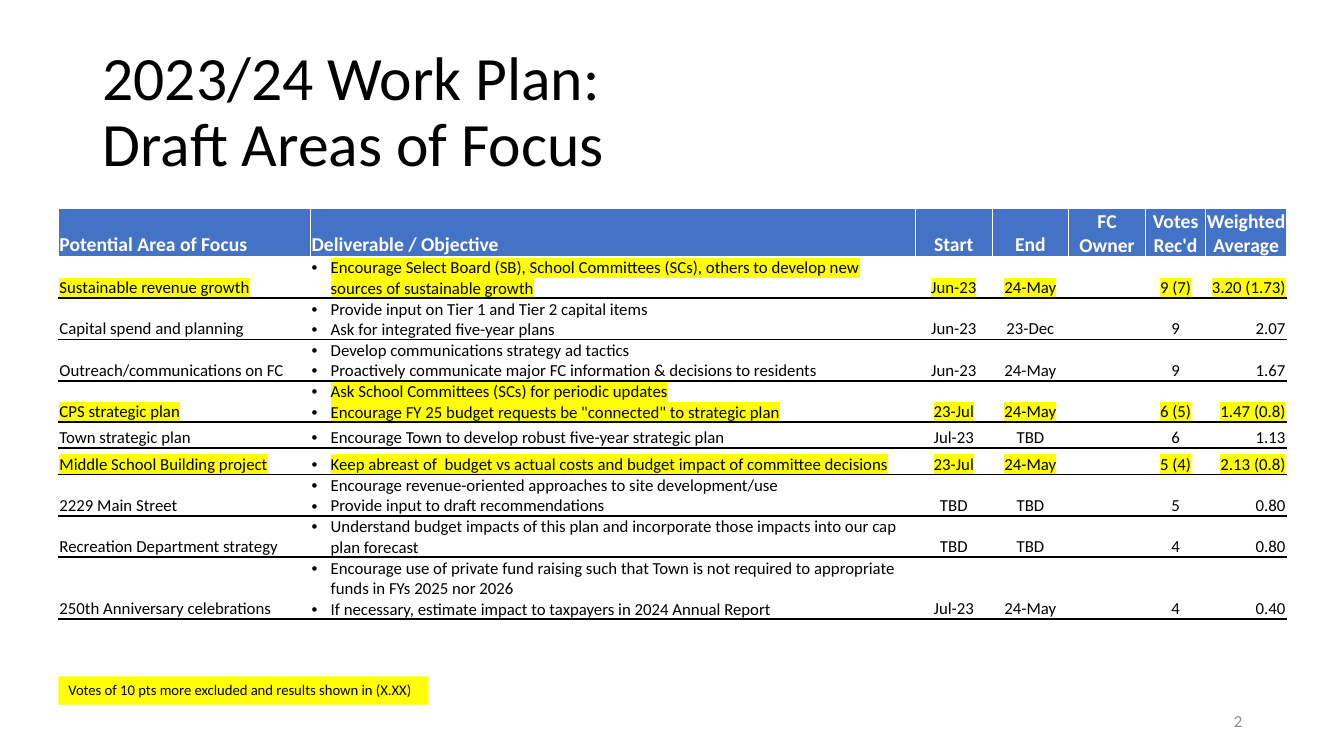
"""Build the 2023/24 work plan slide with its table of draft focus areas."""
from lxml import etree
from pptx import Presentation
from pptx.dml.color import RGBColor
from pptx.enum.shapes import MSO_SHAPE
from pptx.enum.text import MSO_ANCHOR, MSO_AUTO_SIZE, PP_ALIGN
from pptx.oxml.ns import qn
from pptx.util import Pt

PX = 9144
FONT = "Calibri"
LEFT, CENTER, RIGHT = PP_ALIGN.LEFT, PP_ALIGN.CENTER, PP_ALIGN.RIGHT
TOP, MIDDLE, BOTTOM = MSO_ANCHOR.TOP, MSO_ANCHOR.MIDDLE, MSO_ANCHOR.BOTTOM
COLORS = {
    "text": "000000",
    "rule": "000000",
    "paper": "FFFFFF",
    "header": "4472C4",
    "marker": "FFFF00",
    "number": "8C8C8C",
}
COLUMN_WIDTHS = [250, 600, 76, 76, 76, 60, 80]
ALIGNMENTS = [LEFT, LEFT, CENTER, CENTER, CENTER, CENTER, RIGHT]
ROW_HEIGHT = 26
BULLET_INDENT = 19
HEADINGS = ["Potential Area of Focus", "Deliverable / Objective", "Start", "End",
            "FC Owner", "Votes Rec'd", "Weighted Average"]
FOCUS_AREAS = [
    ["Sustainable revenue growth",
     "Encourage Select Board (SB), School Committees (SCs), others to develop "
     "new sources of sustainable growth",
     "Jun-23", "24-May", "", "9 (7)", "3.20 (1.73)"],
    ["Capital spend and planning",
     "Provide input on Tier 1 and Tier 2 capital items\n"
     "Ask for integrated five-year plans",
     "Jun-23", "23-Dec", "", "9", "2.07"],
    ["Outreach/communications on FC",
     "Develop communications strategy ad tactics\n"
     "Proactively communicate major FC information & decisions to residents",
     "Jun-23", "24-May", "", "9", "1.67"],
    ["CPS strategic plan",
     "Ask School Committees (SCs) for periodic updates\n"
     'Encourage FY 25 budget requests be "connected" to strategic plan',
     "23-Jul", "24-May", "", "6 (5)", "1.47 (0.8)"],
    ["Town strategic plan",
     "Encourage Town to develop robust five-year strategic plan",
     "Jul-23", "TBD", "", "6", "1.13"],
    ["Middle School Building project",
     "Keep abreast of  budget vs actual costs and budget impact of committee decisions",
     "23-Jul", "24-May", "", "5 (4)", "2.13 (0.8)"],
    ["2229 Main Street",
     "Encourage revenue-oriented approaches to site development/use\n"
     "Provide input to draft recommendations",
     "TBD", "TBD", "", "5", "0.80"],
    ["Recreation Department strategy",
     "Understand budget impacts of this plan and incorporate those impacts "
     "into our cap plan forecast",
     "TBD", "TBD", "", "4", "0.80"],
    ["250th Anniversary celebrations",
     "Encourage use of private fund raising such that Town is not required to "
     "appropriate funds in FYs 2025 nor 2026\n"
     "If necessary, estimate impact to taxpayers in 2024 Annual Report",
     "Jul-23", "24-May", "", "4", "0.40"],
]


def add_span(para, text, size, color, bold=False, marked=False):
    span = para.add_run()
    span.text = text
    span.font.size = Pt(size)
    span.font.bold = bold
    span.font.color.rgb = RGBColor.from_string(COLORS[color])
    if marked:
        highlight = etree.SubElement(span.font._element, qn("a:highlight"))
        etree.SubElement(highlight, qn("a:srgbClr"), val=COLORS["marker"])
    span.font.name = FONT


def set_borders(cell, sides):
    properties = cell._tc.get_or_add_tcPr()
    for position, (side, (color, width)) in enumerate(sides.items()):
        line = etree.Element(qn(f"a:ln{side}"), w=str(Pt(width)))
        fill = etree.SubElement(line, qn("a:solidFill"))
        etree.SubElement(fill, qn("a:srgbClr"), val=COLORS[color])
        properties.insert(position, line)


deck = Presentation()
deck.slide_width, deck.slide_height = 1333 * PX, 750 * PX
page = deck.slides.add_slide(deck.slide_layouts[6])

title = page.shapes.add_textbox(92 * PX, 40 * PX, 1150 * PX, 145 * PX).text_frame
title.word_wrap = True
title.vertical_anchor = MIDDLE
para = title.paragraphs[0]
para.line_spacing = 0.9
add_span(para, "2023/24 Work Plan:", 44, "text")
para.add_line_break()
add_span(para, "Draft Areas of Focus", 44, "text")

rows = [HEADINGS] + FOCUS_AREAS
table_frame = page.shapes.add_table(len(rows), len(COLUMN_WIDTHS), 58 * PX, 207 * PX,
                                    sum(COLUMN_WIDTHS) * PX, 403 * PX)
table = table_frame.table
table.horz_banding = False
for column, width in zip(table.columns, COLUMN_WIDTHS):
    column.width = width * PX

for row_index, values in enumerate(rows):
    table.rows[row_index].height = ROW_HEIGHT * PX
    is_header = row_index == 0
    marked = "(" in values[5]
    white, black = ("paper", 1), ("rule", 1.5)
    borders = {"L": white, "R": white,
               "T": white if row_index < 2 else black,
               "B": white if is_header else black}
    for column_index, value in enumerate(values):
        cell = table.cell(row_index, column_index)
        cell.margin_left = cell.margin_right = cell.margin_top = PX
        cell.margin_bottom = 0
        cell.vertical_anchor = BOTTOM
        set_borders(cell, borders)
        cell.fill.solid()
        cell.fill.fore_color.rgb = RGBColor.from_string(
            COLORS["header" if is_header else "paper"])
        for line_index, text in enumerate(value.split("\n")):
            frame = cell.text_frame
            para = frame.add_paragraph() if line_index else frame.paragraphs[0]
            para.alignment = ALIGNMENTS[column_index]
            if is_header:
                para.alignment = CENTER if column_index > 1 else LEFT
                add_span(para, text, 14, "paper", bold=True)
            elif text:
                add_span(para, text, 12, "text", marked=marked)
            else:
                etree.SubElement(para._p, qn("a:endParaRPr"), sz="1200")
            if column_index == 1 and not is_header:
                properties = para._p.get_or_add_pPr()
                properties.set("marL", str(BULLET_INDENT * PX))
                properties.set("indent", str(-BULLET_INDENT * PX))
                etree.SubElement(properties, qn("a:buFont"), typeface="Arial")
                etree.SubElement(properties, qn("a:buChar"), char="•")
table_frame.height = 403 * PX

note = page.shapes.add_shape(MSO_SHAPE.RECTANGLE, 58 * PX, 671 * PX, 367 * PX, 28 * PX)
note.shadow.inherit = False
note.fill.solid()
note.fill.fore_color.rgb = RGBColor.from_string(COLORS["marker"])
note.line.fill.background()
note.text_frame.word_wrap = True
note.text_frame.auto_size = MSO_AUTO_SIZE.SHAPE_TO_FIT_TEXT
note.text_frame.vertical_anchor = TOP
para = note.text_frame.paragraphs[0]
para.alignment = LEFT
add_span(para, "Votes of 10 pts more excluded and results shown in (X.XX)", 10.5, "text")

page_number = page.shapes.add_textbox(942 * PX, 695 * PX, 300 * PX, 40 * PX).text_frame
page_number.word_wrap = True
page_number.vertical_anchor = MIDDLE
para = page_number.paragraphs[0]
para.alignment = RIGHT
add_span(para, "2", 12, "number")

deck.save("out.pptx")
